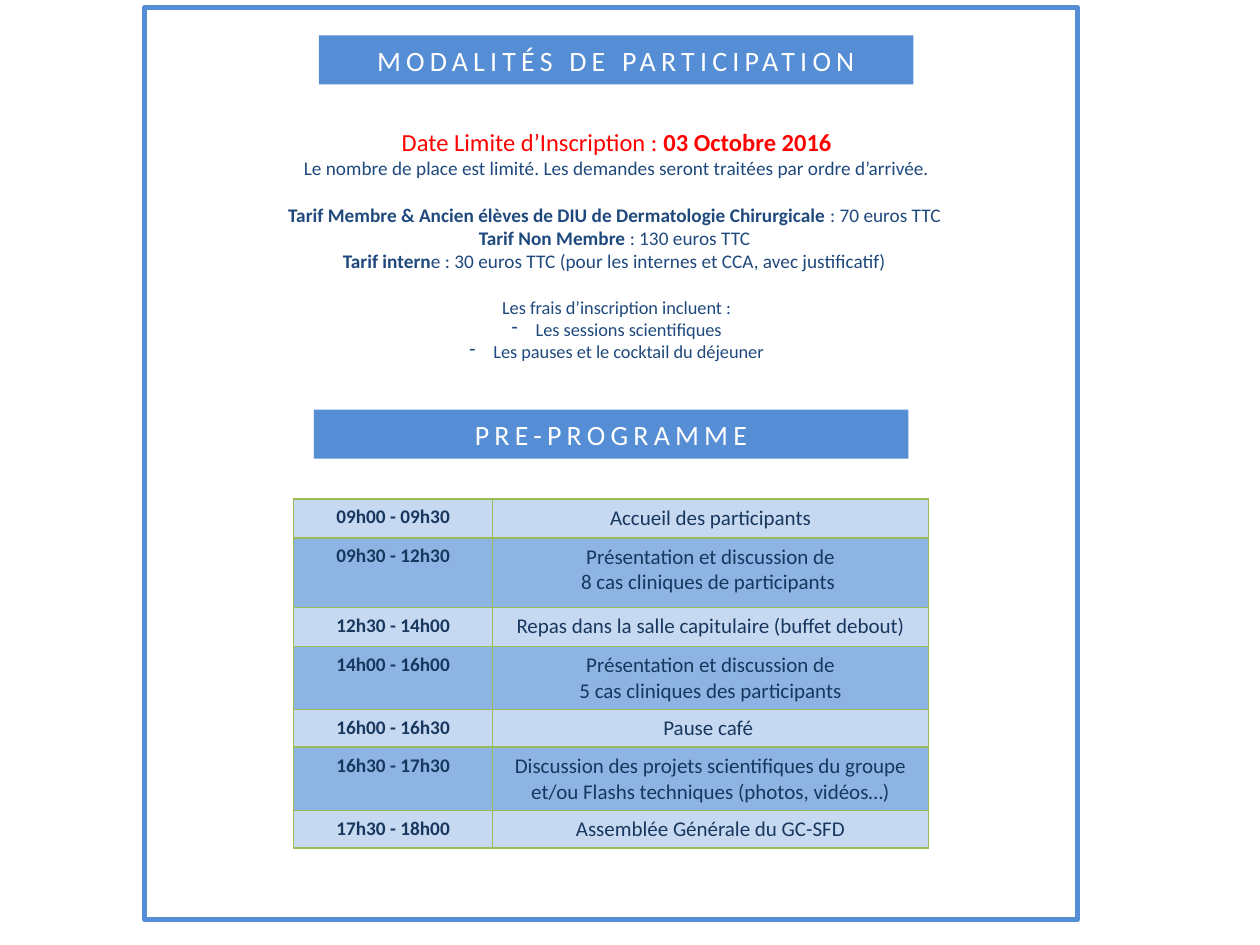
from dataclasses import dataclass

from lxml import etree
from pptx import Presentation
from pptx import util as u
from pptx.dml.color import RGBColor
from pptx.enum import shapes, text
from pptx.oxml.ns import qn

FONT = "Calibri"
BLUE, NAVY, INK = "558ED5", "1F497D", "17375E"
PALE, MID, GREEN = "C6D9F1", "8EB4E3", "9BBB59"
RED, WHITE = "FF0000", "FFFFFF"


@dataclass
class Run:
    text: str
    bold: bool = False


@dataclass
class Para:
    runs: list[Run]
    size: float = 11
    color: str = NAVY
    gap: float = 0
    dash: bool = False


@dataclass
class Banner:
    left: float
    top: float
    title: str


@dataclass
class Slot:
    time: str
    lines: list[str]
    height: float


BANNERS = [
    Banner(2.49, 3.25, "PRE-PROGRAMME"),
    Banner(2.53, 0.28, "MODALITÉS DE PARTICIPATION"),
]

# One blank 11 pt line is worth 13.4 pt
TERMS = [
    Para([Run("Date Limite d’Inscription : "), Run("03 Octobre 2016", True)], 14, RED),
    Para([Run("Le nombre de place est limité. Les demandes seront "
              "traitées par ordre d’arrivée.")]),
    Para([Run("Tarif Membre & Ancien élèves de DIU de Dermatologie Chirurgicale ", True),
          Run(": 70 euros TTC ")], gap=13.4),
    Para([Run("Tarif Non Membre ", True), Run(": 130 euros TTC ")]),
    Para([Run("Tarif intern", True),
          Run("e : 30 euros TTC (pour les internes et CCA, avec justificatif) ")]),
    Para([Run("Les frais d’inscription incluent :")], 10.5, gap=13.4),
    Para([Run("Les sessions scientifiques")], 10.5, dash=True),
    Para([Run("Les pauses et le cocktail du déjeuner")], 10.5, dash=True),
]

SLOTS = [
    Slot("09h00 - 09h30", ["Accueil des participants"], 0.31),
    Slot("09h30 - 12h30", ["Présentation et discussion de",
                           "8 cas cliniques de participants "], 0.55),
    Slot("12h30 - 14h00", ["Repas dans la salle capitulaire (buffet debout)"], 0.31),
    Slot("14h00 - 16h00", ["Présentation et discussion de",
                           "5 cas cliniques des participants"], 0.5),
    Slot("16h00 - 16h30", ["Pause café "], 0.3),
    Slot("16h30 - 17h30", ["Discussion des projets scientifiques du groupe",
                           "et/ou Flashs techniques (photos, vidéos…)"], 0.5),
    Slot("17h30 - 18h00", ["Assemblée Générale du GC-SFD"], 0.3),
]


def rgb(code: str) -> RGBColor:
    return RGBColor.from_string(code)


def box(*sides: float) -> list[u.Length]:
    return [u.Inches(side) for side in sides]


def write(frame, paras: list[Para]) -> None:
    for i, para in enumerate(paras):
        p = frame.add_paragraph() if i else frame.paragraphs[0]
        p.alignment = text.PP_ALIGN.CENTER
        if para.gap:
            p.space_before = u.Pt(para.gap)
        if para.dash:
            ppr = p._p.get_or_add_pPr()
            ppr.set("marL", str(u.Inches(0.19)))
            ppr.set("indent", str(-u.Inches(0.19)))
            etree.SubElement(ppr, qn("a:buChar"), char="-")
        for run in para.runs:
            r = p.add_run()
            r.text = run.text
            r.font.name, r.font.size = FONT, u.Pt(para.size)
            r.font.bold, r.font.color.rgb = run.bold, rgb(para.color)


def rect(slide, *sides: float):
    shape = slide.shapes.add_shape(shapes.MSO_SHAPE.RECTANGLE, *box(*sides))
    shape.shadow.inherit = False
    return shape


def draw_frame(slide) -> None:
    frame = rect(slide, 1.15, 0.06, 7.4, 7.24)
    frame.fill.background()
    frame.line.color.rgb = rgb(BLUE)
    frame.line.width = u.Pt(3)


def draw_banner(slide, banner: Banner) -> None:
    bar = rect(slide, banner.left, banner.top, 4.72, 0.39)
    bar.fill.solid()
    bar.fill.fore_color.rgb = rgb(BLUE)
    bar.line.fill.background()
    bar.text_frame.vertical_anchor = text.MSO_ANCHOR.MIDDLE
    write(bar.text_frame, [Para([Run(banner.title)], 16, WHITE)])
    run = bar.text_frame.paragraphs[0].runs[0]
    run.font._element.set("spc", "300")


def draw_terms(slide) -> None:
    area = slide.shapes.add_textbox(*box(2.06, 0.96, 5.67, 1.98))
    area.text_frame.word_wrap = True
    write(area.text_frame, TERMS)


def style(cell, fill: str) -> None:
    # Borders come before the fill in the cell properties
    props = cell._tc.get_or_add_tcPr()
    for side in ("lnL", "lnR", "lnT", "lnB"):
        line = etree.SubElement(props, qn(f"a:{side}"), w=str(u.Pt(1)))
        solid = etree.SubElement(line, qn("a:solidFill"))
        etree.SubElement(solid, qn("a:srgbClr"), val=GREEN)
    cell.fill.solid()
    cell.fill.fore_color.rgb = rgb(fill)


def draw_plan(slide) -> None:
    high = sum(slot.height for slot in SLOTS)
    grid = slide.shapes.add_table(len(SLOTS), 2, *box(2.33, 3.96, 5.04, high)).table
    for col, width in zip(grid.columns, (1.58, 3.46)):
        col.width = u.Inches(width)
    for i, slot in enumerate(SLOTS):
        grid.rows[i].height = u.Inches(slot.height)
        time, topic = grid.cell(i, 0), grid.cell(i, 1)
        for cell in (time, topic):
            style(cell, MID if i % 2 else PALE)
        write(time.text_frame, [Para([Run(slot.time, True)], 11, INK)])
        write(topic.text_frame, [Para([Run(line)], 12, INK) for line in slot.lines])


def main() -> None:
    deck = Presentation()
    deck.slide_width, deck.slide_height = box(10, 7.5)
    slide = deck.slides.add_slide(deck.slide_layouts[6])
    draw_frame(slide)
    draw_terms(slide)
    draw_plan(slide)
    for banner in BANNERS:
        draw_banner(slide, banner)
    deck.save("out.pptx")


if __name__ == "__main__":
    main()
